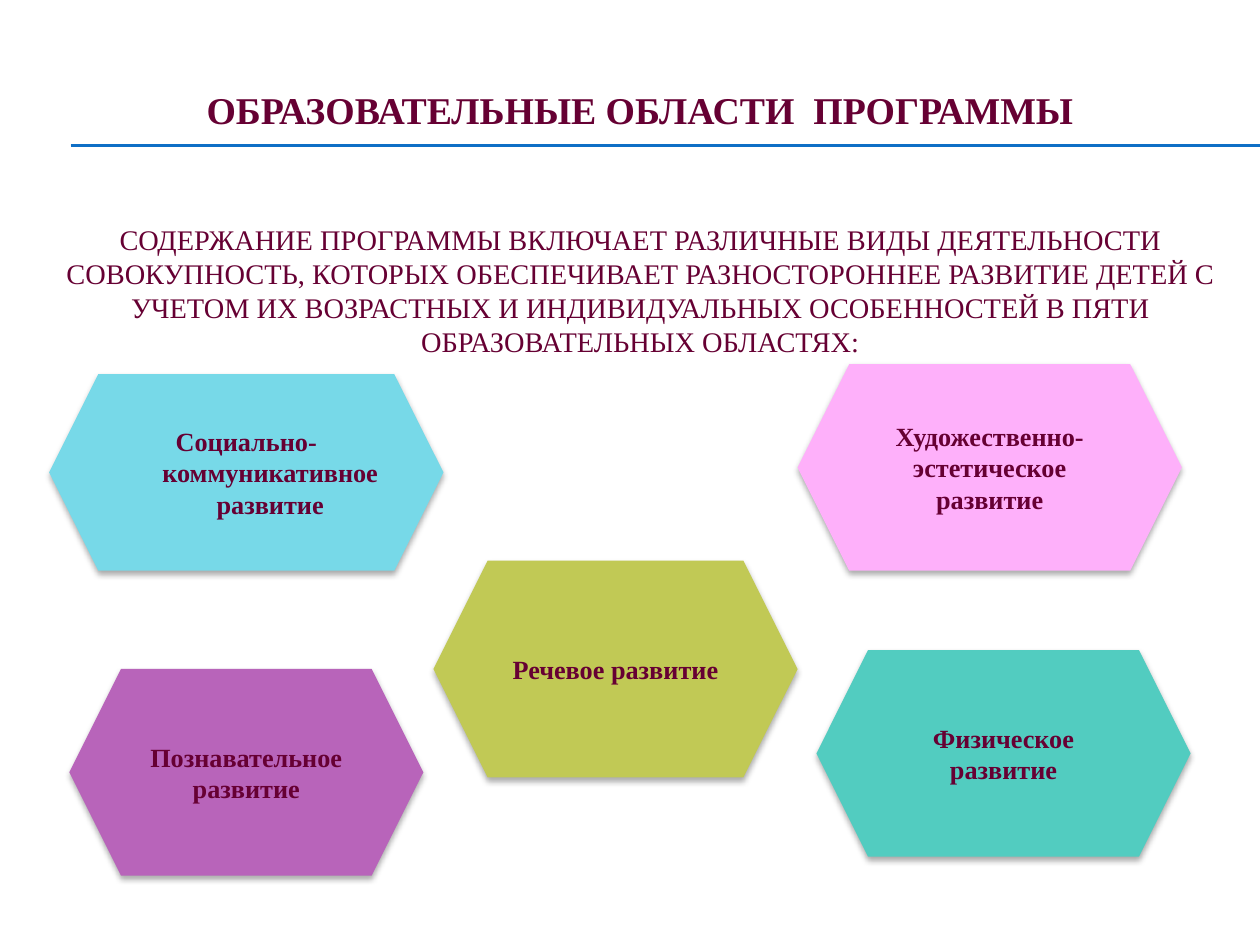
"""Build a slide on the five educational areas of the programme."""
from lxml import etree
from pptx import Presentation
from pptx.dml.color import RGBColor
from pptx.enum.shapes import MSO_CONNECTOR as Connector, MSO_SHAPE as Shape
from pptx.enum.text import MSO_ANCHOR as Anchor, PP_ALIGN as Align
from pptx.oxml import parse_xml
from pptx.oxml.ns import nsdecls, qn
from pptx.util import Inches, Pt

WINE = RGBColor(0x66, 0x00, 0x33)
BLUE = RGBColor(0x0F, 0x6F, 0xC6)
SKY = RGBColor(0x77, 0xD9, 0xE8)
PURPLE = RGBColor(0xB8, 0x64, 0xBA)
OLIVE = RGBColor(0xC1, 0xC9, 0x55)
TEAL = RGBColor(0x52, 0xCC, 0xC0)
PINK = RGBColor(0xFE, 0xB0, 0xFA)

SHADOW = (
    f'<a:effectLst {nsdecls("a")}>'
    f'<a:outerShdw blurRad="{Pt(3.5)}" dist="{Pt(2.2)}" dir="5400000" algn="ctr" rotWithShape="0">'
    '<a:srgbClr val="000000"><a:alpha val="32000"/></a:srgbClr>'
    '</a:outerShdw></a:effectLst>'
)


def write(box, text, size, bold):
    frame = box.text_frame
    frame.word_wrap = True
    frame.vertical_anchor = Anchor.MIDDLE
    frame.text = text
    para = frame.paragraphs[0]
    para.alignment = Align.CENTER
    for span in para.runs:
        span.font.name = "Times New Roman"
        span.font.size = Pt(size)
        span.font.bold = bold
        span.font.color.rgb = WINE
    return para


deck = Presentation()
deck.slide_width, deck.slide_height = Inches(10), Inches(7.5)
page = deck.slides.add_slide(deck.slide_layouts[6])

for y in (1.15, 1.16):
    rule = page.shapes.add_connector(
        Connector.STRAIGHT, Inches(0.56), Inches(y), Inches(10), Inches(y))
    rule.line.color.rgb = BLUE
    rule.line.width = Pt(0.75)
    etree.SubElement(rule._element.spPr, qn("a:effectLst"))

headings = [
    ("ОБРАЗОВАТЕЛЬНЫЕ ОБЛАСТИ  ПРОГРАММЫ", 0.62, 0.5, 21.6, True),
    ("СОДЕРЖАНИЕ ПРОГРАММЫ ВКЛЮЧАЕТ РАЗЛИЧНЫЕ ВИДЫ ДЕЯТЕЛЬНОСТИ "
     "СОВОКУПНОСТЬ, КОТОРЫХ ОБЕСПЕЧИВАЕТ РАЗНОСТОРОННЕЕ РАЗВИТИЕ ДЕТЕЙ С "
     "УЧЕТОМ ИХ ВОЗРАСТНЫХ И ИНДИВИДУАЛЬНЫХ ОСОБЕННОСТЕЙ В ПЯТИ "
     "ОБРАЗОВАТЕЛЬНЫХ ОБЛАСТЯХ:", 1.7, 1.2, 16.2, False),
]
for text, top, height, size, bold in headings:
    box = page.shapes.add_textbox(Inches(0.33), Inches(top), Inches(9.5), Inches(height))
    write(box, text, size, bold)

areas = [
    ("Социально-коммуникативное развитие", SKY, 0.39, 2.97, 3.13, 1.56, 0.38),
    ("Познавательное развитие", PURPLE, 0.55, 5.31, 2.81, 1.64, 0),
    ("Речевое развитие", OLIVE, 3.44, 4.45, 2.89, 1.72, 0),
    ("Физическое развитие", TEAL, 6.48, 5.16, 2.97, 1.64, 0),
    ("Художественно-эстетическое развитие", PINK, 6.33, 2.89, 3.05, 1.64, 0),
]
for text, colour, left, top, width, height, indent in areas:
    hexagon = page.shapes.add_shape(
        Shape.HEXAGON, Inches(left), Inches(top), Inches(width), Inches(height))
    hexagon.fill.solid()
    hexagon.fill.fore_color.rgb = colour
    hexagon.line.fill.background()
    hexagon._element.spPr.append(parse_xml(SHADOW))
    para = write(hexagon, text, 15, True)
    if indent:
        properties = para._p.get_or_add_pPr()
        properties.set("marL", str(Inches(indent)))
        properties.set("indent", str(-Inches(indent)))

deck.save("out.pptx")
